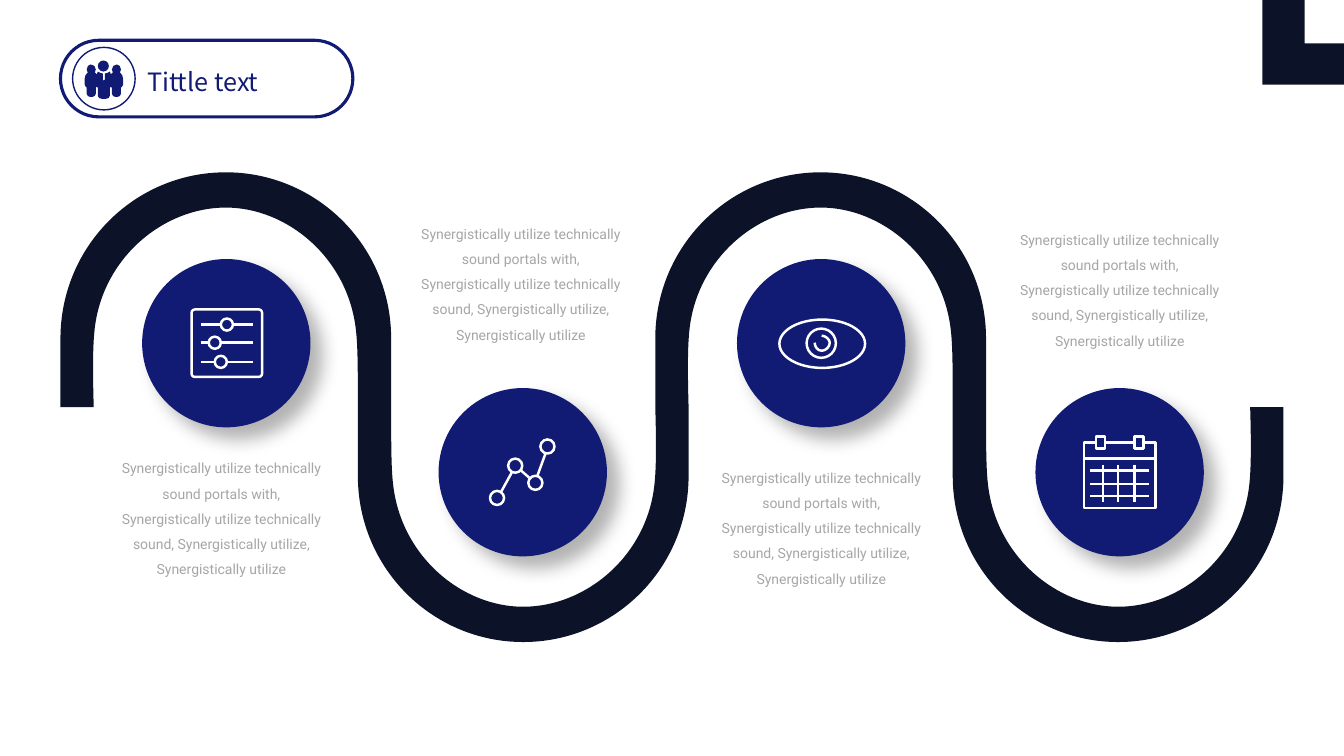
"""Build the four-step winding road slide."""
import dataclasses
import typing

import lxml.etree
import pptx
import pptx.dml.color
import pptx.enum.shapes
import pptx.enum.text
import pptx.oxml
import pptx.oxml.ns
import pptx.util

NAVY = pptx.dml.color.RGBColor(0x12, 0x1B, 0x74)
INK = pptx.dml.color.RGBColor(0x0C, 0x13, 0x29)
GREY = pptx.dml.color.RGBColor(0xA6, 0xA6, 0xA6)
WHITE = pptx.dml.color.RGBColor(0xFF, 0xFF, 0xFF)
SHAPE = pptx.enum.shapes.MSO_SHAPE
ALIGN = pptx.enum.text.PP_ALIGN
Inches = pptx.util.Inches
qn = pptx.oxml.ns.qn
Color = typing.Optional[pptx.dml.color.RGBColor]
Moves = typing.Sequence[tuple[float, ...]]
ICON_WEIGHT = 1.75
DETAIL = (
    "Synergistically utilize technically sound portals with, Synergistically "
    "utilize technically sound, Synergistically utilize, Synergistically utilize"
)


@dataclasses.dataclass(frozen=True)
class Step:
    disc_left: float
    disc_top: float
    detail_left: float
    detail_top: float


@dataclasses.dataclass(frozen=True)
class Paint:
    fill: Color = None
    line: Color = None
    weight: float = ICON_WEIGHT


STEPS = (
    Step(1.41, 2.57, 1.17, 4.48),
    Step(4.35, 3.85, 4.14, 2.15),
    Step(7.31, 2.57, 7.12, 4.57),
    Step(10.27, 3.85, 10.08, 2.21),
)
STROKE = Paint(line=WHITE)
ROAD_WAVE = (
    (-1.64, 4.04), (-1.64, 3.36),
    (-1.64, 2.44, -0.9, 1.71, 0, 1.71), (0.9, 1.71, 1.64, 2.44, 1.64, 3.36),
    (1.64, 4.04), (1.64, 4.39, 1.64, 4.65, 1.66, 4.81),
    (1.74, 5.52, 2.34, 6.02, 2.95, 6.02), (3.57, 6.02, 4.17, 5.52, 4.25, 4.82),
    (4.27, 4.65, 4.27, 4.39, 4.26, 4.04),
)
PUPIL = (
    (8.15, 3.33), (8.19, 3.33, 8.23, 3.37, 8.23, 3.4),
    (8.23, 3.44, 8.19, 3.48, 8.15, 3.48), (8.11, 3.48, 8.08, 3.44, 8.08, 3.4),
)
PAGE = ((10.87, 4.39), (10.75, 4.39), (10.75, 5.04), (11.46, 5.04), (11.46, 4.39), (11.34, 4.39))
CORNER = ((12.52, 0), (12.94, 0), (12.94, 0.43), (13.36, 0.43), (13.36, 0.84), (12.52, 0.84))
TEAM_LEFT_HALF = (
    (1.03, 0.8), (1.02, 0.8, 1.02, 0.8, 1.02, 0.79), (1.02, 0.73),
    (1, 0.73, 0.99, 0.72, 0.97, 0.71), (0.97, 0.72, 0.96, 0.73, 0.96, 0.74),
    (0.95, 0.73, 0.95, 0.72, 0.94, 0.72), (0.95, 0.71, 0.95, 0.7, 0.95, 0.69),
    (0.95, 0.66, 0.93, 0.64, 0.9, 0.64), (0.88, 0.64, 0.86, 0.66, 0.86, 0.69),
    (0.86, 0.7, 0.86, 0.71, 0.87, 0.72), (0.85, 0.73, 0.84, 0.76, 0.84, 0.78),
    (0.84, 0.84), (0.84, 0.85, 0.85, 0.86, 0.86, 0.87), (0.86, 0.93),
    (0.86, 0.95, 0.88, 0.96, 0.89, 0.96), (0.92, 0.96),
    (0.93, 0.96, 0.95, 0.95, 0.95, 0.93), (0.95, 0.87),
    (0.95, 0.87, 0.96, 0.87, 0.96, 0.86), (0.97, 0.86, 0.97, 0.87, 0.97, 0.87),
    (0.97, 0.95), (0.97, 0.97, 0.99, 0.98, 1.01, 0.98),
)


def place(moves: Moves, dx: float, dy: float = 0, sx: int = 1, sy: int = 1) -> list[tuple]:
    return [tuple(dy + sy * v if i % 2 else dx + sx * v for i, v in enumerate(move))
            for move in moves]


def backwards(moves: Moves) -> list[tuple]:
    steps = [moves[-1][-2:]]
    for before, move in zip(moves[-2::-1], moves[:0:-1]):
        controls = move[2:4] + move[:2] if len(move) == 6 else ()
        steps.append(controls + before[-2:])
    return steps


def apply_paint(part: typing.Any, paint: Paint) -> None:
    if paint.fill is None:
        part.fill.background()
    else:
        part.fill.solid()
        part.fill.fore_color.rgb = paint.fill
    if paint.line is None:
        part.line.fill.background()
    else:
        part.line.color.rgb = paint.line
        part.line.width = pptx.util.Pt(paint.weight)
    part.shadow.inherit = False


def add_preset(shapes: typing.Any, kind: typing.Any, left: float, top: float,
               width: float, height: float, paint: Paint = STROKE) -> typing.Any:
    part = shapes.add_shape(kind, Inches(left), Inches(top), Inches(width), Inches(height))
    apply_paint(part, paint)
    return part


def add_outline(shapes: typing.Any, moves: Moves, paint: Paint, close: bool = True) -> None:
    ends = [(Inches(move[-2]), Inches(move[-1])) for move in moves]
    builder = shapes.build_freeform(*ends[0])
    builder.add_line_segments(ends[1:], close=close)
    outline = builder.convert_to_shape()
    segments = list(outline._element.iter(qn("a:lnTo")))
    for segment, move in zip(segments, moves[1:]):
        if len(move) == 6:
            segment.tag = qn("a:cubicBezTo")
            for index, (x, y) in enumerate((move[:2], move[2:4])):
                control = lxml.etree.Element(qn("a:pt"))
                control.set("x", str(Inches(x) - outline.left))
                control.set("y", str(Inches(y) - outline.top))
                segment.insert(index, control)
    apply_paint(outline, paint)


def add_stroke(shapes: typing.Any, x1: float, y1: float, x2: float, y2: float) -> None:
    stroke = shapes.add_connector(pptx.enum.shapes.MSO_CONNECTOR.STRAIGHT,
                                  Inches(x1), Inches(y1), Inches(x2), Inches(y2))
    stroke.line.color.rgb = WHITE
    stroke.line.width = pptx.util.Pt(ICON_WEIGHT)
    lxml.etree.SubElement(stroke._element.spPr, qn("a:effectLst"))


def add_disc(shapes: typing.Any, step: Step) -> None:
    disc = add_preset(shapes, SHAPE.OVAL, step.disc_left, step.disc_top, 1.67, 1.67, Paint(NAVY))
    disc._element.spPr.find(qn("a:effectLst")).append(pptx.oxml.parse_xml(
        f'<a:outerShdw {pptx.oxml.ns.nsdecls("a")} blurRad="{pptx.util.Pt(13)}" '
        f'dist="{pptx.util.Pt(12)}" dir="2700000" algn="tl" rotWithShape="0">'
        '<a:srgbClr val="000000"><a:alpha val="30000"/></a:srgbClr></a:outerShdw>'))


def add_text(shapes: typing.Any, wording: str, box: tuple[float, float, float, float],
             font: str, size: float, color: Color, align: typing.Any) -> typing.Any:
    frame = shapes.add_textbox(*map(Inches, box)).text_frame
    frame.word_wrap = True
    frame.auto_size = pptx.enum.text.MSO_AUTO_SIZE.SHAPE_TO_FIT_TEXT
    paragraph = frame.paragraphs[0]
    paragraph.text = wording
    paragraph.alignment = align
    paragraph.font.name = font
    paragraph.font.size = pptx.util.Pt(size)
    paragraph.font.color.rgb = color
    return frame


def add_trend_icon(shapes: typing.Any) -> None:
    for left, top in ((4.86, 4.87), (5.04, 4.55), (5.24, 4.72), (5.36, 4.36)):
        add_preset(shapes, SHAPE.OVAL, left, top, 0.14, 0.14)
    for link in ((4.97, 4.88, 5.08, 4.68), (5.17, 4.67, 5.25, 4.74), (5.33, 4.72, 5.41, 4.5)):
        add_stroke(shapes, *link)


def add_eye_icon(shapes: typing.Any) -> None:
    add_preset(shapes, SHAPE.OVAL, 7.73, 3.17, 0.85, 0.48)
    add_preset(shapes, SHAPE.OVAL, 8, 3.26, 0.29, 0.29)
    add_outline(shapes, PUPIL, STROKE, close=False)


def add_slider_icon(shapes: typing.Any) -> None:
    add_preset(shapes, SHAPE.ROUNDED_RECTANGLE, 1.9, 3.07, 0.7, 0.67).adjustments[0] = 0.05
    for knob, y in ((2.19, 3.22), (2.07, 3.4), (2.13, 3.59)):
        add_preset(shapes, SHAPE.OVAL, knob, y - 0.06, 0.12, 0.12)
        add_stroke(shapes, knob + 0.12, y, 2.51, y)
        add_stroke(shapes, 1.99, y, knob, y)


def add_calendar_icon(shapes: typing.Any) -> None:
    add_outline(shapes, PAGE, STROKE, close=False)
    for ring in (10.87, 11.25):
        add_preset(shapes, SHAPE.RECTANGLE, ring, 4.33, 0.09, 0.12)
    add_stroke(shapes, 10.97, 4.39, 11.25, 4.39)
    add_stroke(shapes, 10.75, 4.55, 11.46, 4.55)
    for x, y in ((10.94, 4.67), (11.09, 4.8), (11.25, 4.92)):
        add_stroke(shapes, x, 4.61, x, 4.98)
        add_stroke(shapes, 10.81, y, 11.4, y)


def add_team_icon(shapes: typing.Any) -> None:
    add_preset(shapes, SHAPE.OVAL, 0.97, 0.6, 0.11, 0.11, Paint(NAVY))
    right_half = place(backwards(TEAM_LEFT_HALF), 2.06, sx=-1)
    add_outline(shapes, [*TEAM_LEFT_HALF, *right_half], Paint(NAVY))


def main() -> None:
    deck = pptx.Presentation()
    deck.slide_width, deck.slide_height = Inches(13.33), Inches(7.5)
    shapes = deck.slides.add_slide(deck.slide_layouts[6]).shapes
    for step in STEPS:
        add_disc(shapes, step)
    edge = place(ROAD_WAVE, 2.24) + place(ROAD_WAVE[1:], 8.14)
    add_outline(shapes, edge + place(edge, 13.33, 8.08, -1, -1), Paint(INK))
    for add_icon in (add_trend_icon, add_eye_icon, add_slider_icon, add_calendar_icon):
        add_icon(shapes.add_group_shape().shapes)
    add_outline(shapes, CORNER, Paint(INK))
    for step in STEPS:
        box = (step.detail_left, step.detail_top, 2.05, 1.48)
        frame = add_text(shapes, DETAIL, box, "Roboto", 10, GREY, ALIGN.CENTER)
        frame.margin_left = frame.margin_right = frame.margin_top = frame.margin_bottom = 0
        frame.paragraphs[0].line_spacing = 1.5
    pill = add_preset(shapes, SHAPE.ROUNDED_RECTANGLE, 0.6, 0.4, 2.9, 0.76, Paint(None, NAVY, 2.25))
    pill.adjustments[0] = 0.5
    add_preset(shapes, SHAPE.OVAL, 0.72, 0.47, 0.62, 0.62, Paint(WHITE, NAVY, 1))
    add_team_icon(shapes.add_group_shape().shapes)
    add_text(shapes, "Tittle text", (1.36, 0.61, 2.01, 0.4), "Noto Sans CJK SC", 18, NAVY, ALIGN.JUSTIFY)
    deck.save("out.pptx")


if __name__ == "__main__":
    main()
